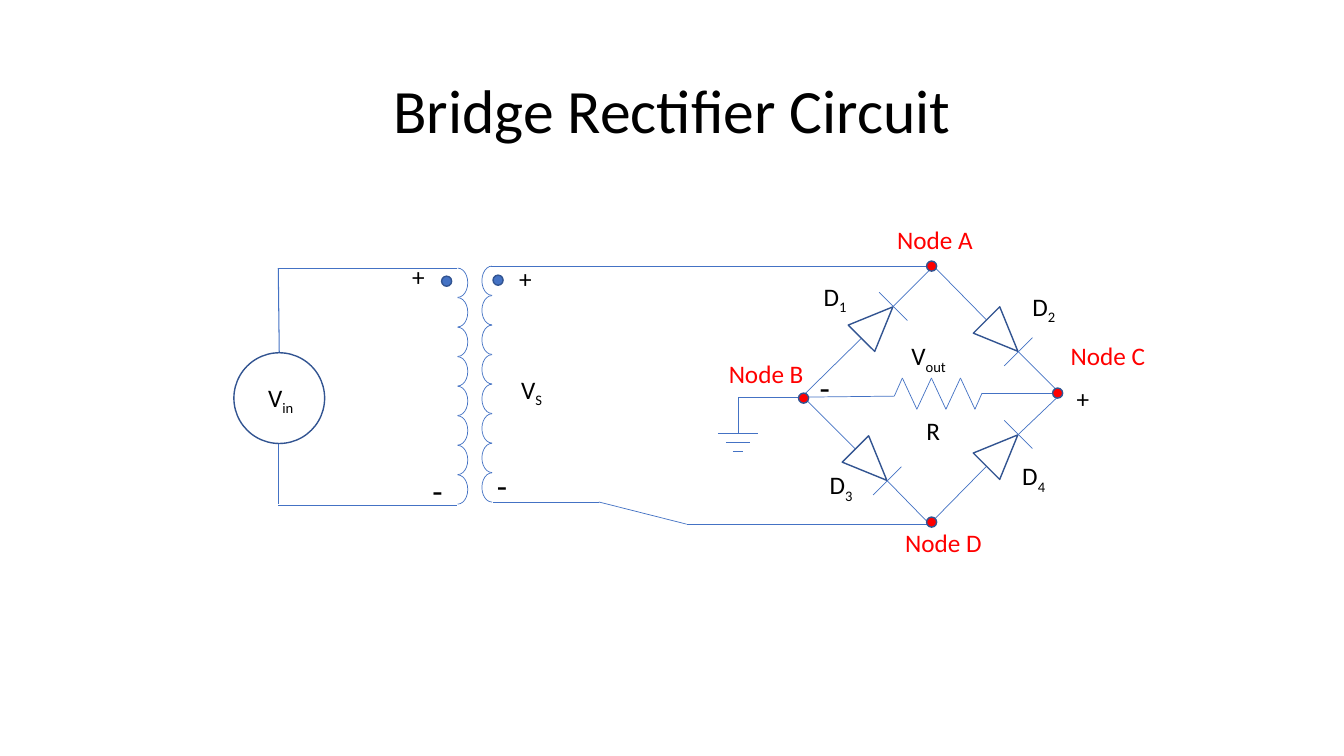
from itertools import pairwise

from lxml import etree
from pptx import Presentation
from pptx.dml.color import RGBColor
from pptx.enum.shapes import MSO_CONNECTOR, MSO_SHAPE
from pptx.enum.text import MSO_ANCHOR, PP_ALIGN
from pptx.oxml.ns import qn
from pptx.util import Inches, Pt

LINE = MSO_CONNECTOR.STRAIGHT
OVAL, ARC, TRIANGLE = MSO_SHAPE.OVAL, MSO_SHAPE.ARC, MSO_SHAPE.ISOSCELES_TRIANGLE
CENTER, MIDDLE = PP_ALIGN.CENTER, MSO_ANCHOR.MIDDLE
BLUE, DARK_BLUE, RED, BLACK = "4472C4", "325491", "FF0000", "000000"

prs = Presentation()
prs.slide_width, prs.slide_height = Inches(13.33), Inches(7.5)
s = prs.slides.add_slide(prs.slide_layouts[6])


def draw(kind, box, line=DARK_BLUE, width=1, fill=None, rotation=0, adjust=()):
    """Add a preset shape, or a connector when kind is LINE."""
    box = [Inches(v) for v in box]
    if kind == LINE:
        sp = s.shapes.add_connector(kind, *box)
        etree.SubElement(sp._element.spPr, qn("a:effectLst"))
    else:
        sp = s.shapes.add_shape(kind, *box)
        sp.shadow.inherit = False
        sp.rotation = rotation
        for i, value in enumerate(adjust):
            sp.adjustments[i] = value
        if fill:
            sp.fill.solid()
            sp.fill.fore_color.rgb = RGBColor.from_string(fill)
        else:
            sp.fill.background()
    sp.line.color.rgb = RGBColor.from_string(line)
    sp.line.width = Pt(width)


def label(box, text, sub="", size=18, color=BLACK):
    """Add a text box, with an optional subscript after the text."""
    tf = s.shapes.add_textbox(*[Inches(v) for v in box]).text_frame
    tf.word_wrap = True
    for part in filter(None, (text, sub)):
        r = tf.paragraphs[0].add_run()
        r.text = part
        for name, value in {"name": "Calibri", "size": Pt(size)}.items():
            setattr(r.font, name, value)
        r.font.color.rgb = RGBColor.from_string(color)
        if part == sub:
            r._r.get_or_add_rPr().set("baseline", "-25000")
    return tf


# Title
tf = label((0.92, 0.4, 11.5, 1.45), "Bridge Rectifier Circuit", size=44)
tf.vertical_anchor = MIDDLE
tf.paragraphs[0].alignment = CENTER
tf.paragraphs[0].line_spacing = 0.9

# Wires, as chains of points
wires = [
    (0.5, [(4.87, 2.64), (9.27, 2.64)]),
    (0.5, [(2.76, 2.66), (4.53, 2.66)]),
    (0.5, [(2.76, 5.01), (4.53, 5.01)]),
    (0.75, [(2.76, 2.66), (2.77, 3.5)]),
    (0.75, [(2.76, 4.4), (2.76, 5)]),
    (0.5, [(4.89, 4.98), (5.94, 4.98), (6.81, 5.2), (9.22, 5.2)]),
    (0.5, [(7.96, 3.94), (7.32, 3.94), (7.32, 4.3)]),
]
# Load resistor with its leads
zigzag = [(8.95 + 0.144 * i, 4.06 if i % 2 else 3.75) for i in range(6)]
wires.append((0.5, [(7.96, 3.94), (8.87, 3.93), *zigzag, (9.74, 3.9), (10.52, 3.9)]))
# Ground bars
for i, half in enumerate((0.2, 0.12, 0.05)):
    y = 4.3 + 0.09 * i
    wires.append((0.5, [(7.32 - half, y), (7.32 + half, y)]))
for width, points in wires:
    for start, end in pairwise(points):
        draw(LINE, (*start, *end), BLUE, width)

# Transformer: eight turns on each winding, with a polarity dot
windings = [(4.44, 2.66, (162, 54.39)), (4.78, 2.64, (53.61, 162))]
for left, top, angles in windings:
    for turn in range(8):
        draw(ARC, (left, top + 0.293 * turn, 0.2, 0.29), BLUE, 0.5, adjust=angles)
for left, top in ((4.38, 2.74), (4.89, 2.73)):
    draw(OVAL, (left, top, 0.1, 0.1), fill=BLUE)

# Voltage source
draw(OVAL, (2.32, 3.5, 0.9, 0.9))

# Diodes: centre, slope (-1 points up, 1 points down), ends of the two leads
A, B, C, D = (9.26, 2.64), (7.96, 3.93), (10.52, 3.91), (9.22, 5.2)
diodes = [
    (8.7, 3.2, -1, B, A),
    (9.94, 3.33, 1, A, C),
    (8.64, 4.61, 1, B, D),
    (9.94, 4.47, -1, D, C),
]
REACH, BAR = 0.16, 0.14
for x, y, slope, start, end in diodes:
    base = (x - REACH, y - slope * REACH)
    tip_x, tip_y = x + REACH, y + slope * REACH
    draw(LINE, (*start, *base), BLUE, 0.5)
    draw(TRIANGLE, (x - 0.185, y - 0.22, 0.37, 0.44), rotation=90 + 45 * slope)
    draw(LINE, (tip_x - BAR, tip_y + slope * BAR, tip_x + BAR, tip_y - slope * BAR), BLUE, 0.5)
    draw(LINE, (tip_x, tip_y, *end), BLUE, 0.5)

# Quantities
quantities = [
    (2.56, 3.74, "V", "in"),
    (5.07, 3.66, "V", "S"),
    (8.94, 3.33, "V", "out"),
    (9.09, 4.07, "R", ""),
    (8.07, 2.74, "D", "1"),
    (10.14, 2.84, "D", "2"),
    (8.13, 4.61, "D", "3"),
    (10.04, 4.52, "D", "4"),
]
for left, top, text, sub in quantities:
    label((left, top, 0.71, 0.4), text, sub)

# Polarity signs
for left, top in ((3.99, 2.54), (5.05, 2.56), (10.58, 3.75)):
    label((left, top, 0.36, 0.4), "+")
for left, top in ((4.19, 4.61), (4.83, 4.56), (8.03, 3.59)):
    label((left, top, 0.36, 0.5), "-", size=24)

# Nodes: dot position, label position
nodes = {
    "A": (9.19, 2.59, 8.8, 2.18),
    "B": (7.92, 3.9, 7.13, 3.51),
    "C": (10.44, 3.85, 10.52, 3.33),
    "D": (9.19, 5.13, 8.88, 5.18),
}
for name, (dot_x, dot_y, left, top) in nodes.items():
    draw(OVAL, (dot_x, dot_y, 0.1, 0.1), fill=RED)
    label((left, top, 1.06, 0.4), f"Node {name}", color=RED)

prs.save("out.pptx")
